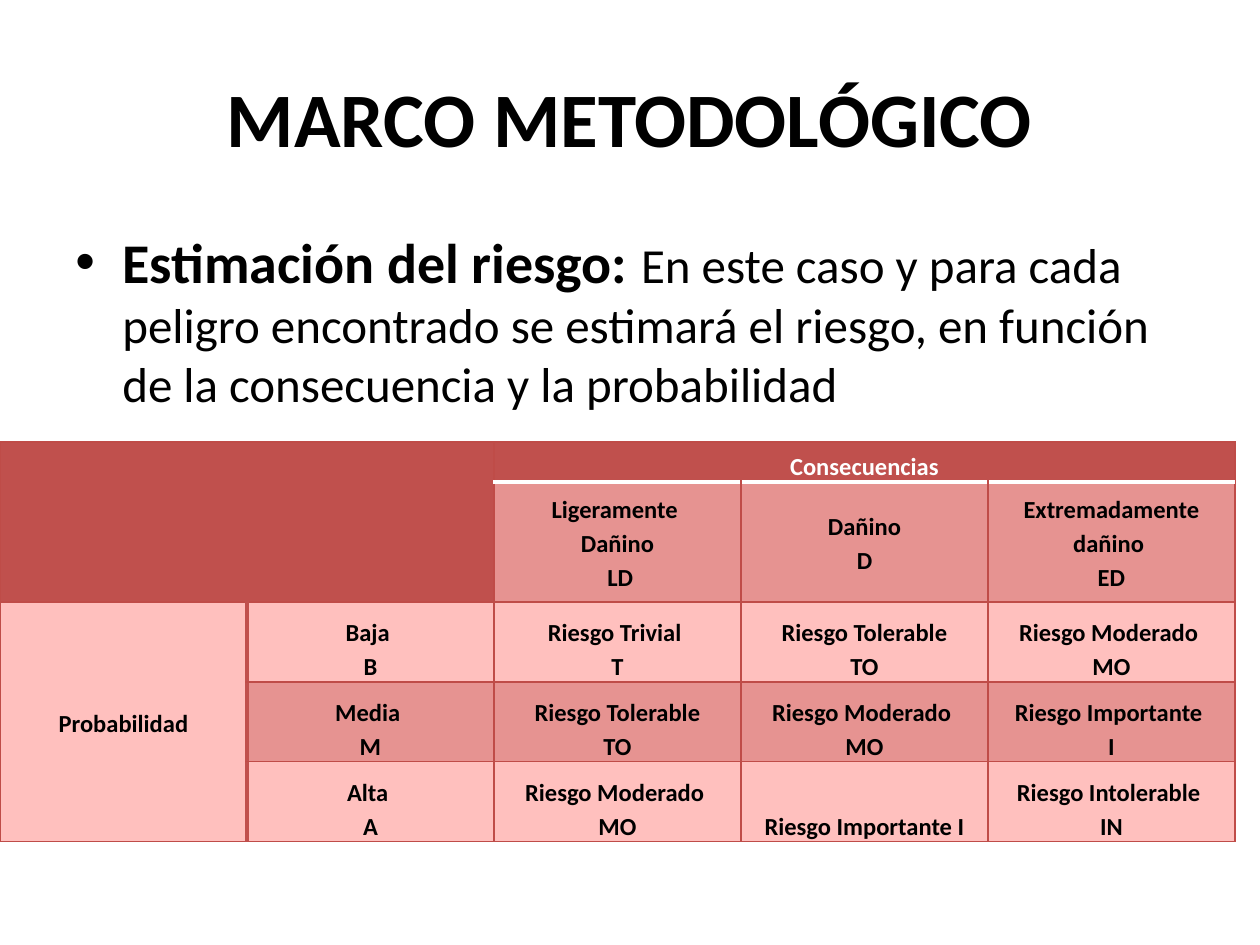
"""Build the risk estimation slide with its probability and consequence matrix."""
from lxml import etree
from pptx import Presentation
from pptx import util as u
from pptx.dml.color import RGBColor
from pptx.enum import text
from pptx.oxml.ns import qn

PX = 914400 / 126
COLORS = {"black": "000000", "white": "FFFFFF", "red": "C0504D",
          "border": "BF4C48", "light": "FFC0BE", "band": "E69391"}
SIDES = ["lnL", "lnR", "lnT", "lnB"]


def style(span, size, bold=True, color="black"):
    for name, value in {"name": "Calibri", "size": u.Pt(size), "bold": bold}.items():
        setattr(span.font, name, value)
    span.font.color.rgb = RGBColor.from_string(COLORS[color])


def edge(cell, side, color, width):
    props = cell._tc.get_or_add_tcPr()
    for old in props.findall(qn(f"a:{side}")):
        props.remove(old)
    line = etree.Element(qn(f"a:{side}"), w=str(u.Pt(width)))
    fill = etree.SubElement(line, qn("a:solidFill"))
    etree.SubElement(fill, qn("a:srgbClr"), val=COLORS[color])
    props.insert(SIDES.index(side), line)


deck = Presentation()
deck.slide_width, deck.slide_height = u.Inches(10), u.Inches(7.5)
page = deck.slides.add_slide(deck.slide_layouts[6])

paragraphs = []
for area, anchor in [((63, 38, 1134, 157), text.MSO_ANCHOR.MIDDLE),
                     ((63, 221, 1134, 624), text.MSO_ANCHOR.TOP)]:
    box = page.shapes.add_textbox(*[int(n * PX) for n in area])
    box.text_frame.word_wrap = True
    box.text_frame.vertical_anchor = anchor
    paragraphs.append(box.text_frame.paragraphs[0])
title, body = paragraphs

title.alignment = text.PP_ALIGN.CENTER
span = title.add_run()
span.text = "MARCO METODOLÓGICO"
style(span, 44)

for words, size, bold in [
    ("Estimación del riesgo: ", 32, True),
    ("En este caso y para cada peligro encontrado se estimará el riesgo, "
     "en función de la consecuencia y la probabilidad", 28, False),
]:
    span = body.add_run()
    span.text = words
    style(span, size, bold)
props = body._p.get_or_add_pPr()
indent = int(47 * PX)
props.set("marL", str(indent))
props.set("indent", str(-indent))
etree.SubElement(props, qn("a:buFont"), typeface="Arial")
etree.SubElement(props, qn("a:buChar"), char="•")

rows = [
    ["", "", "Consecuencias", "", ""],
    ["", "", "Ligeramente \nDañino\n LD", "Dañino\nD", "Extremadamente dañino \nED"],
    ["Probabilidad", "Baja \nB", "Riesgo Trivial \nT", "Riesgo Tolerable\nTO",
     "Riesgo Moderado \nMO"],
    ["", "Media \nM", "Riesgo Tolerable\nTO", "Riesgo Moderado \nMO",
     "Riesgo Importante \nI"],
    ["", "Alta \nA", "Riesgo Moderado \nMO", "Riesgo Importante I",
     "Riesgo Intolerable \nIN"],
]
heights = [40, 120, 80, 80, 80]
column = 247
matrix = page.shapes.add_table(5, 5, 0, int(442 * PX), int(5 * column * PX),
                               int(sum(heights) * PX)).table
matrix.first_row = matrix.horz_banding = False
for item in matrix.columns:
    item.width = int(column * PX)
for item, height in zip(matrix.rows, heights):
    item.height = int(height * PX)

for r, row in enumerate(rows):
    for c, words in enumerate(row):
        cell = matrix.cell(r, c)
        header = r == 0 or (r == 1 and c < 2)
        middle = r == 1 or c == 0
        fill = "red" if header else "band" if r % 2 and c else "light"
        cell.fill.solid()
        cell.fill.fore_color.rgb = RGBColor.from_string(COLORS[fill])
        anchor = text.MSO_ANCHOR.MIDDLE if middle else text.MSO_ANCHOR.BOTTOM
        for name, value in {"margin_left": u.Inches(0.05), "margin_right": u.Inches(0.05),
                            "margin_top": 0, "margin_bottom": 0,
                            "vertical_anchor": anchor}.items():
            setattr(cell, name, value)
        for side in SIDES:
            edge(cell, side, "border", 0.75)
        para = cell.text_frame.paragraphs[0]
        para.text = words
        para.alignment = text.PP_ALIGN.CENTER
        para.line_spacing = 1.15
        for span in para.runs:
            style(span, 14, color="white" if header else "black")
        for gap in para._p.findall(qn("a:br")):
            etree.SubElement(gap, qn("a:rPr"), sz="1400")

for c in range(2, 5):
    edge(matrix.cell(0, c), "lnB", "white", 2)
    edge(matrix.cell(1, c), "lnT", "white", 2)
for r in range(2, 5):
    edge(matrix.cell(r, 0), "lnR", "red", 2)
    edge(matrix.cell(r, 1), "lnL", "red", 2)

for first, last in [((0, 0), (1, 1)), ((0, 2), (0, 4)), ((2, 0), (4, 0))]:
    matrix.cell(*first).merge(matrix.cell(*last))

deck.save("out.pptx")
